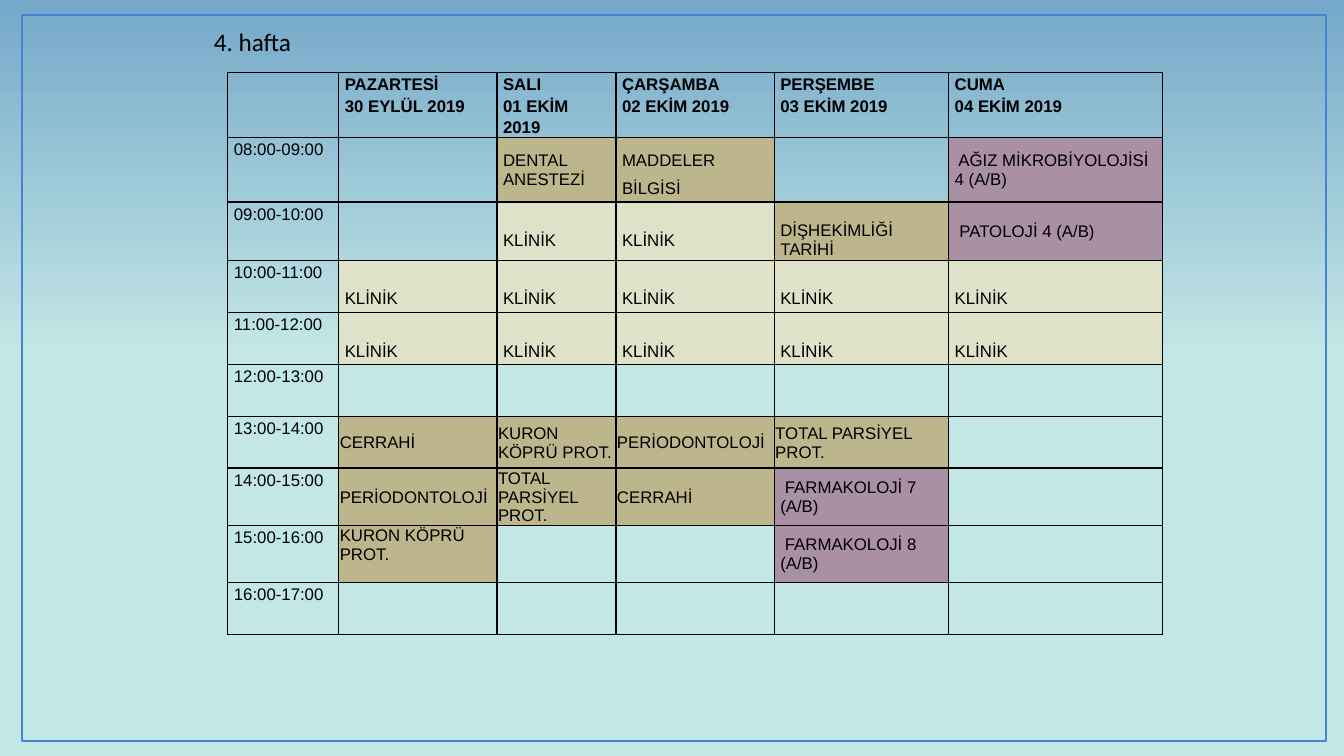
"""Build the timetable slide for the fourth week of clinical lessons."""
from dataclasses import dataclass
from typing import Any, Optional

from lxml import etree
from pptx import Presentation
from pptx.dml.color import RGBColor
from pptx.enum.shapes import MSO_SHAPE
from pptx.enum.text import MSO_ANCHOR, MSO_AUTO_SIZE, PP_ALIGN
from pptx.oxml.ns import qn
from pptx.util import Inches, Pt

RECTANGLE = MSO_SHAPE.RECTANGLE
TOP, MIDDLE = MSO_ANCHOR.TOP, MSO_ANCHOR.MIDDLE
LEFT = PP_ALIGN.LEFT
NO_AUTOFIT = MSO_AUTO_SIZE.NONE
TITLE_ONLY = 5
BORDER_TAGS = ("a:lnL", "a:lnR", "a:lnT", "a:lnB")


@dataclass(frozen=True)
class Theme:
    """Colours, fonts and sizes of the slide."""
    text: str = "000000"
    frame: str = "4584D3"
    sky: str = "75A8C9"
    water: str = "C3E7E6"
    lecture: str = "BDB68D"
    clinic: str = "E0E1C9"
    science: str = "AA90A4"
    title_font: str = "Calibri"
    table_font: str = "Arial"
    title_size: float = 18
    table_size: float = 12
    frame_width: float = 1.5
    border_width: float = 1


THEME = Theme()


@dataclass(frozen=True)
class CellStyle:
    """Fill, placement and type of one kind of timetable cell."""
    fill: Optional[str] = None
    anchor: Any = MIDDLE
    side: float = 0.06
    top: float = 0
    spacing: float = 1
    bold: bool = False


@dataclass(frozen=True)
class Lesson:
    """A lesson text with its cell style."""
    text: str
    style: CellStyle


HEADING = CellStyle(anchor=TOP, spacing=1.15, bold=True)
HOUR = CellStyle(anchor=TOP, spacing=1.15)
LECTURE = CellStyle(THEME.lecture)
SPACED_LECTURE = CellStyle(THEME.lecture, spacing=1.5)
LOW_LECTURE = CellStyle(THEME.lecture, TOP, top=0.19)
PRACTICE = CellStyle(THEME.lecture, side=0.01, top=0.01)
TOP_PRACTICE = CellStyle(THEME.lecture, TOP, side=0.01, top=0.01)
CLINIC = CellStyle(THEME.clinic, TOP, top=0.29)
SCIENCE = CellStyle(THEME.science)
FREE = Lesson("", CellStyle())

KLINIK = Lesson("KLİNİK", CLINIC)
CERRAHI = Lesson("CERRAHİ", PRACTICE)
PERIODONTOLOJI = Lesson("PERİODONTOLOJİ", PRACTICE)
TOTAL_PARSIYEL = Lesson("TOTAL PARSİYEL PROT.", PRACTICE)
KURON_KOPRU = "KURON KÖPRÜ PROT."

DAYS = ("", "PAZARTESİ\n30 EYLÜL 2019", "SALI\n01 EKİM 2019",
        "ÇARŞAMBA\n02 EKİM 2019", "PERŞEMBE\n03 EKİM 2019",
        "CUMA\n04 EKİM 2019")
FIRST_HOUR = 8
LESSONS = (
    (FREE, Lesson("DENTAL ANESTEZİ", LECTURE),
     Lesson("MADDELER BİLGİSİ", SPACED_LECTURE), FREE,
     Lesson(" AĞIZ MİKROBİYOLOJİSİ 4 (A/B)", SCIENCE)),
    (FREE, KLINIK, KLINIK, Lesson("DİŞHEKİMLİĞİ TARİHİ", LOW_LECTURE),
     Lesson(" PATOLOJİ 4 (A/B)", SCIENCE)),
    (KLINIK,) * 5,
    (KLINIK,) * 5,
    (FREE,) * 5,
    (CERRAHI, Lesson(KURON_KOPRU, PRACTICE), PERIODONTOLOJI,
     TOTAL_PARSIYEL, FREE),
    (PERIODONTOLOJI, TOTAL_PARSIYEL, CERRAHI,
     Lesson(" FARMAKOLOJİ 7 (A/B)", SCIENCE), FREE),
    (Lesson(KURON_KOPRU, TOP_PRACTICE), FREE, FREE,
     Lesson(" FARMAKOLOJİ 8 (A/B)", SCIENCE), FREE),
    (FREE,) * 5,
)
COLUMN_WIDTHS = (1.1, 1.57, 1.18, 1.57, 1.73, 2.12)
ROW_HEIGHTS = (0.6, 0.64, 0.58, 0.52, 0.51, 0.52, 0.51, 0.57, 0.57, 0.51)


def apply(target: Any, values: dict[str, Any]) -> None:
    """Set each named attribute on the target."""
    for name, value in values.items():
        setattr(target, name, value)


def set_font(font: Any, face: str, size: float, bold: bool = False) -> None:
    """Give a font its face, size, weight and the text colour."""
    apply(font, {"name": face, "size": Pt(size), "bold": bold})
    font.color.rgb = RGBColor.from_string(THEME.text)


def paint_background(slide: Any) -> None:
    """Fill the background from water at the bottom to sky at the top."""
    fill = slide.background.fill
    fill.gradient()
    fill.gradient_angle = 90
    colours = ((0.53, THEME.water), (1, THEME.sky))
    for stop, (position, colour) in zip(fill.gradient_stops, colours):
        stop.position = position
        stop.color.rgb = RGBColor.from_string(colour)


def draw_frame(slide: Any) -> None:
    """Draw the thin frame around the slide."""
    frame = slide.shapes.add_shape(RECTANGLE, Inches(0.22), Inches(0.15),
                                   Inches(12.93), Inches(7.2))
    frame.shadow.inherit = False
    frame.fill.background()
    frame.line.color.rgb = RGBColor.from_string(THEME.frame)
    frame.line.width = Pt(THEME.frame_width)


def write_title(slide: Any, week: str) -> None:
    """Place the week in the title placeholder."""
    title = slide.shapes.title
    apply(title, {"left": Inches(2.02), "top": Inches(0.21),
                  "width": Inches(0.98), "height": Inches(0.4)})
    title.text_frame.text = week
    apply(title.text_frame, {"word_wrap": False, "auto_size": NO_AUTOFIT,
                             "vertical_anchor": TOP})
    heading = title.text_frame.paragraphs[0]
    apply(heading, {"alignment": LEFT, "line_spacing": 1, "space_before": Pt(0)})
    set_font(heading.runs[0].font, THEME.title_font, THEME.title_size)


def add_borders(cell: Any) -> None:
    """Draw a solid line on all four sides of a cell."""
    properties = cell._tc.get_or_add_tcPr()
    for tag in BORDER_TAGS:
        line = etree.SubElement(properties, qn(tag),
                                w=str(int(Pt(THEME.border_width))))
        solid = etree.SubElement(line, qn("a:solidFill"))
        etree.SubElement(solid, qn("a:srgbClr"), val=THEME.text)


def fill_cell(cell: Any, lesson: Lesson) -> None:
    """Write a lesson into a cell and format it."""
    style = lesson.style
    add_borders(cell)
    apply(cell, {"text": lesson.text, "vertical_anchor": style.anchor,
                 "margin_left": Inches(style.side),
                 "margin_right": Inches(style.side),
                 "margin_top": Inches(style.top), "margin_bottom": 0})
    if style.fill:
        cell.fill.solid()
        cell.fill.fore_color.rgb = RGBColor.from_string(style.fill)
    else:
        cell.fill.background()
    for paragraph in cell.text_frame.paragraphs:
        apply(paragraph, {"alignment": LEFT, "line_spacing": style.spacing})
        set_font(paragraph.font, THEME.table_font, THEME.table_size, style.bold)
        for run in paragraph.runs:
            set_font(run.font, THEME.table_font, THEME.table_size, style.bold)


def draw_timetable(slide: Any) -> None:
    """Build the table of days and hours."""
    timetable = slide.shapes.add_table(
        len(ROW_HEIGHTS), len(COLUMN_WIDTHS), Inches(2.26), Inches(0.72),
        Inches(sum(COLUMN_WIDTHS)), Inches(sum(ROW_HEIGHTS))).table
    apply(timetable, {"first_row": False, "horz_banding": False})
    for column, width in zip(timetable.columns, COLUMN_WIDTHS):
        column.width = Inches(width)
    rows = [tuple(Lesson(day, HEADING) for day in DAYS)]
    for hour, lessons in enumerate(LESSONS, FIRST_HOUR):
        rows.append((Lesson(f"{hour:02}:00-{hour + 1:02}:00", HOUR), *lessons))
    for row, height, lessons in zip(timetable.rows, ROW_HEIGHTS, rows):
        row.height = Inches(height)
        for cell, lesson in zip(row.cells, lessons):
            fill_cell(cell, lesson)


def main() -> None:
    """Create and save the presentation."""
    presentation = Presentation()
    apply(presentation, {"slide_width": Inches(13.33), "slide_height": Inches(7.5)})
    slide = presentation.slides.add_slide(presentation.slide_layouts[TITLE_ONLY])
    paint_background(slide)
    draw_frame(slide)
    draw_timetable(slide)
    write_title(slide, "4. hafta")
    presentation.save("out.pptx")


if __name__ == "__main__":
    main()
